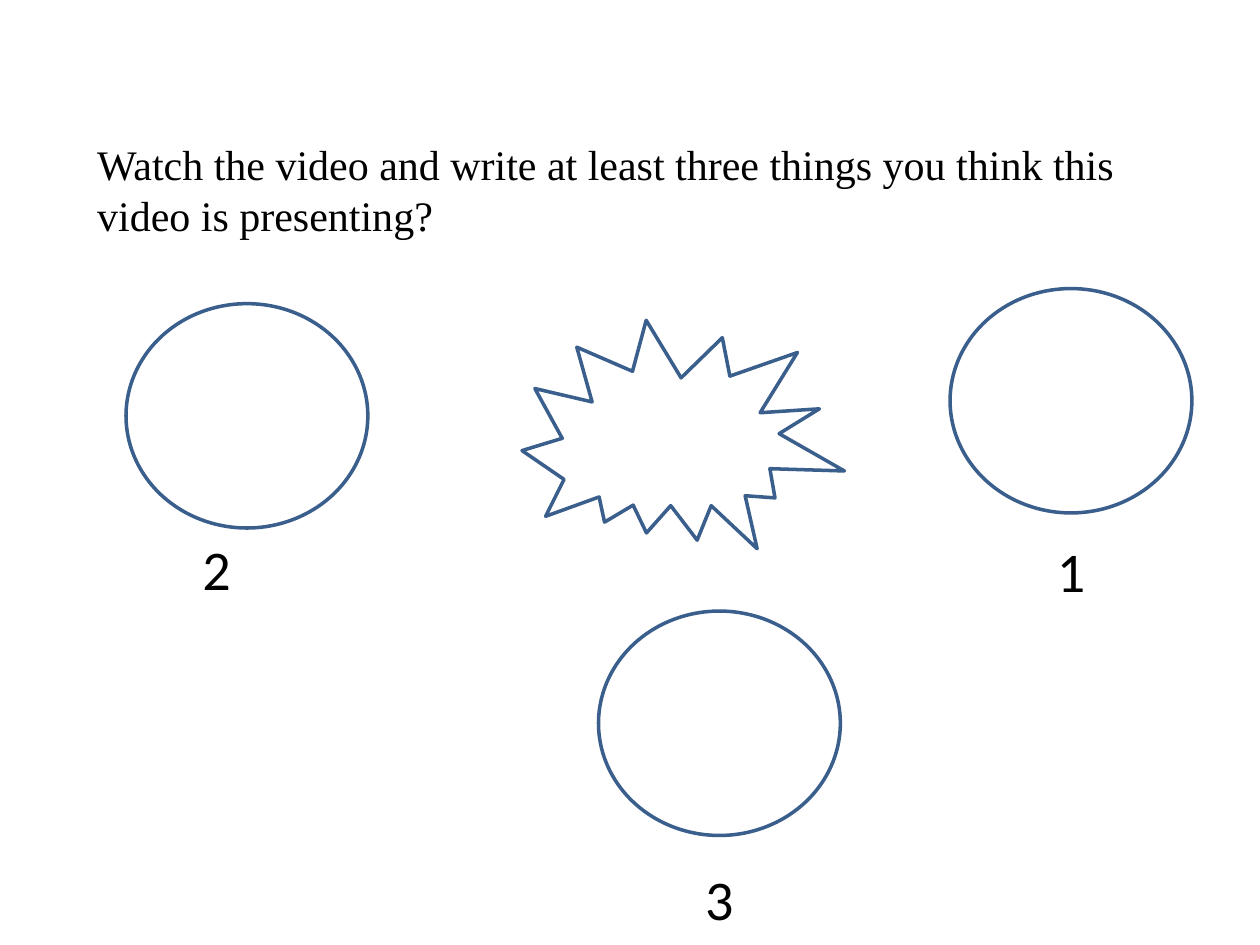
from pptx import Presentation
from pptx.dml.color import RGBColor
from pptx.enum.shapes import MSO_SHAPE as Preset
from pptx.enum.text import MSO_ANCHOR as Anchor, PP_ALIGN as Align
from pptx.util import Pt

OUTLINE = "3A5F8C"
BLACK = "000000"


def color(value):
    return RGBColor.from_string(value)


def points(box):
    return [Pt(length) for length in box]


def add_text(slide, box, text, font="Calibri", size=32, align=Align.CENTER, insets=(7.2, 3.6)):
    frame = slide.shapes.add_textbox(*points(box)).text_frame
    frame.word_wrap = True
    frame.vertical_anchor = Anchor.TOP
    frame.margin_left = frame.margin_right = Pt(insets[0])
    frame.margin_top = frame.margin_bottom = Pt(insets[1])
    paragraph = frame.paragraphs[0]
    paragraph.alignment = align
    run = paragraph.add_run()
    run.text = text
    run.font.name = font
    run.font.size = Pt(size)
    run.font.color.rgb = color(BLACK)


def add_outline(slide, preset, box, rotation=0):
    shape = slide.shapes.add_shape(preset, *points(box))
    shape.rotation = rotation
    shape.shadow.inherit = False
    shape.fill.background()
    shape.line.color.rgb = color(OUTLINE)
    shape.line.width = Pt(2)


def add_question(slide, box):
    add_text(slide, box, "Watch the video and write at least three things you think this video is presenting?",
             font="Times New Roman", size=24, align=Align.LEFT, insets=(1.5, 0.75))


def add_answer(slide, number, circle_box, label_box):
    add_outline(slide, Preset.OVAL, circle_box)
    add_text(slide, label_box, str(number))


def main():
    presentation = Presentation()
    presentation.slide_width, presentation.slide_height = Pt(720), Pt(540)
    slide = presentation.slides.add_slide(presentation.slide_layouts[6])

    add_question(slide, (54, 78.5, 630, 81.4))
    add_outline(slide, Preset.EXPLOSION2, (301.7, 176.4, 177.8, 151.2), rotation=28.7)

    circle_size = (138.2, 128.2)
    label_size = (44.6, 46.1)
    answers = [
        (1, (542.9, 164.9), (589.7, 303.1)),
        (2, (72, 173.5), (101.5, 301.7)),
        (3, (342, 349.2), (388.8, 490.3)),
    ]
    for number, circle_corner, label_corner in answers:
        add_answer(slide, number, circle_corner + circle_size, label_corner + label_size)

    presentation.save("out.pptx")


if __name__ == "__main__":
    main()
